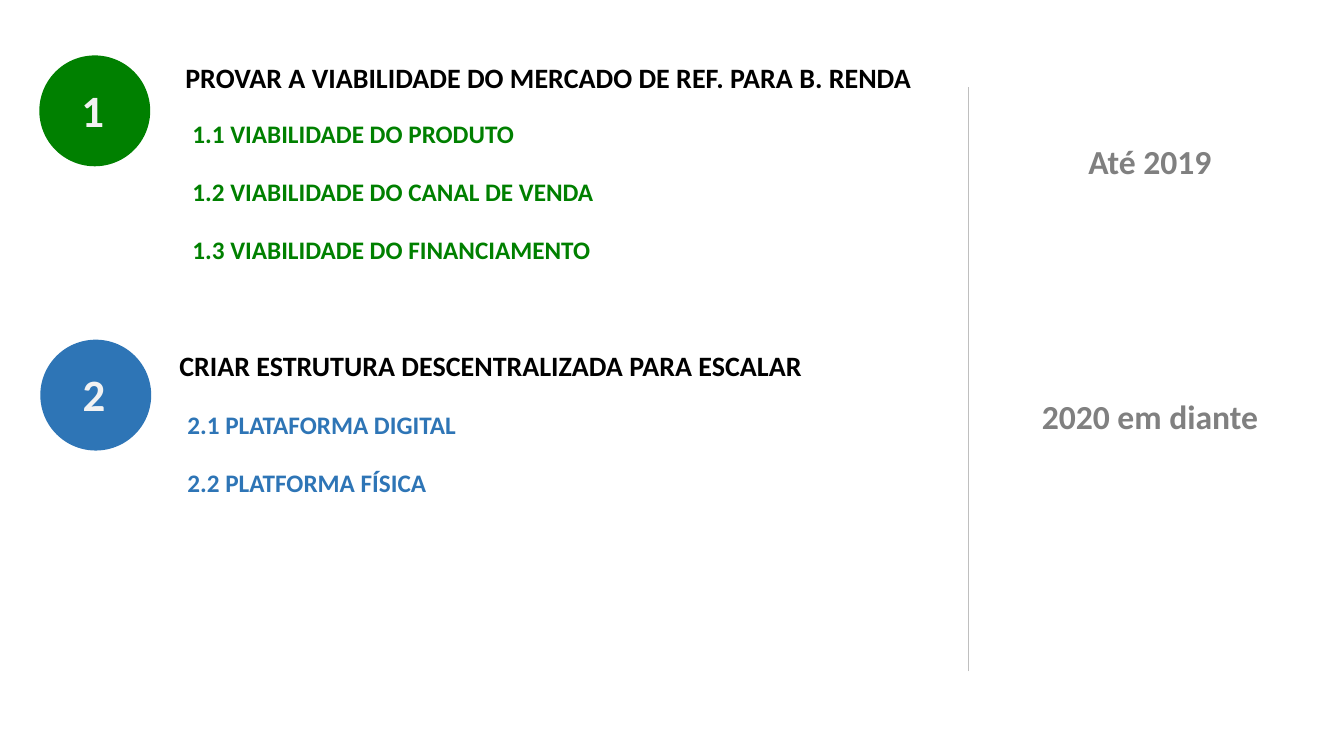
from dataclasses import dataclass

from lxml import etree
from pptx import Presentation
from pptx.dml.color import RGBColor
from pptx.enum import shapes, text
from pptx.oxml.ns import qn
from pptx.util import Inches, Pt


@dataclass(frozen=True)
class Theme:
    font: str = "Calibri"
    black: str = "000000"
    green: str = "008000"
    blue: str = "2E75B6"
    light: str = "F2F2F2"
    gray: str = "808080"
    rule: str = "BFBFBF"
    number: int = 32
    period: int = 24
    heading: int = 20
    item: int = 18


theme = Theme()

prs = Presentation()
prs.slide_width = Inches(13.33)
prs.slide_height = Inches(7.5)
s = prs.slides.add_slide(prs.slide_layouts[6])


def add_text(content, *, at, size, color, align=text.PP_ALIGN.LEFT):
    tf = s.shapes.add_textbox(*(Inches(v) for v in at)).text_frame
    tf.word_wrap = True
    p = tf.paragraphs[0]
    p.alignment = align
    r = p.add_run()
    r.text = content
    r.font.name = theme.font
    r.font.size = Pt(size)
    r.font.bold = True
    r.font.color.rgb = RGBColor.from_string(color)


goals = [
    ("1", theme.green, 0.39, 0.55,
     "PROVAR A VIABILIDADE DO MERCADO DE REF. PARA B. RENDA", 1.74, 0.55,
     1.81, 1.12,
     ["1.1 VIABILIDADE DO PRODUTO",
      "1.2 VIABILIDADE DO CANAL DE VENDA",
      "1.3 VIABILIDADE DO FINANCIAMENTO"],
     "Até 2019", 1.35),
    ("2", theme.blue, 0.4, 3.37,
     "CRIAR ESTRUTURA DESCENTRALIZADA PARA ESCALAR", 1.68, 3.41,
     1.76, 4.01,
     ["2.1 PLATAFORMA DIGITAL",
      "2.2 PLATFORMA FÍSICA"],
     "2020 em diante", 3.88),
]

for (number, color, circle_x, circle_y, heading, heading_x, heading_y,
     item_x, item_y, items, period, period_y) in goals:
    sp = s.shapes.add_shape(shapes.MSO_SHAPE.OVAL, Inches(circle_x),
                            Inches(circle_y), Inches(1.1), Inches(1.1))
    sp.shadow.inherit = False
    sp.fill.solid()
    sp.fill.fore_color.rgb = RGBColor.from_string(color)
    sp.line.fill.background()
    add_text(number, at=(circle_x + 0.32, circle_y + 0.22, 0.58, 0.64),
             size=theme.number, color=theme.light)
    add_text(heading, at=(heading_x, heading_y, 8.94, 0.44),
             size=theme.heading, color=theme.black)
    for i, item in enumerate(items):
        add_text(item, at=(item_x, item_y + i * 0.58, 7.91, 0.4),
                 size=theme.item, color=color)
    add_text(period, at=(9.83, period_y, 3.15, 0.5), size=theme.period,
             color=theme.gray, align=text.PP_ALIGN.CENTER)

divider = s.shapes.add_connector(shapes.MSO_CONNECTOR.STRAIGHT, Inches(9.61),
                                 Inches(6.66), Inches(9.61), Inches(0.86))
divider.line.color.rgb = RGBColor.from_string(theme.rule)
divider.line.width = Pt(0.75)
etree.SubElement(divider.element.spPr, qn("a:effectLst"))

prs.save("out.pptx")
